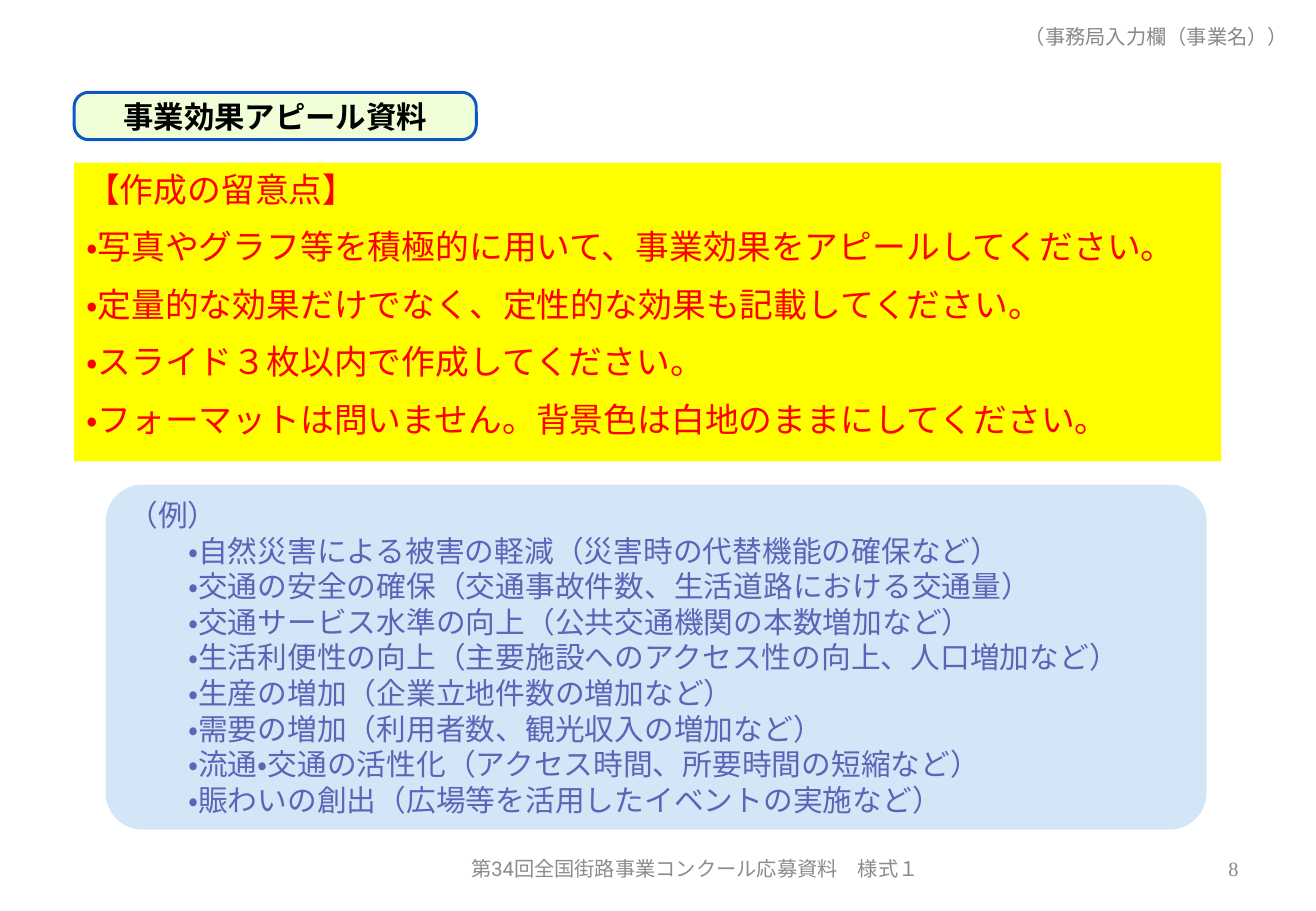
from pptx import Presentation
from pptx.dml.color import RGBColor
from pptx.enum.lang import MSO_LANGUAGE_ID
from pptx.enum.shapes import MSO_SHAPE
from pptx.enum.text import MSO_ANCHOR, PP_ALIGN
from pptx.util import Inches, Pt

JAPANESE = MSO_LANGUAGE_ID.JAPANESE
RECT, ROUNDED = MSO_SHAPE.RECTANGLE, MSO_SHAPE.ROUNDED_RECTANGLE
TOP, MIDDLE = MSO_ANCHOR.TOP, MSO_ANCHOR.MIDDLE
LEFT, CENTER, RIGHT = PP_ALIGN.LEFT, PP_ALIGN.CENTER, PP_ALIGN.RIGHT

COLORS = {
    "example_fill": "D4E5F7", "example_text": "5C64B7",
    "title_fill": "F0FFD7", "title_line": "0E58C4", "title_text": "000000",
    "notice_fill": "FFFF00", "notice_text": "FF0000",
    "margin_text": "898989", "footer_text": "8C8C8C",
}
EXAMPLES = [
    "自然災害による被害の軽減（災害時の代替機能の確保など）",
    "交通の安全の確保（交通事故件数、生活道路における交通量）",
    "交通サービス水準の向上（公共交通機関の本数増加など）",
    "生活利便性の向上（主要施設へのアクセス性の向上、人口増加など）",
    "生産の増加（企業立地件数の増加など）",
    "需要の増加（利用者数、観光収入の増加など）",
    "流通・交通の活性化（アクセス時間、所要時間の短縮など）",
    "賑わいの創出（広場等を活用したイベントの実施など）",
]
NOTICES = [
    "写真やグラフ等を積極的に用いて、事業効果をアピールしてください。",
    "定量的な効果だけでなく、定性的な効果も記載してください。",
    "スライド３枚以内で作成してください。",
    "フォーマットは問いません。背景色は白地のままにしてください。",
]


class AppealSlide:
    """Draws styled panels and labels on one slide."""

    def __init__(self, slide):
        self.slide = slide

    def color(self, name):
        return RGBColor.from_string(COLORS[name])

    def fill_text(self, frame, lines, font, size, color, align=LEFT, anchor=MIDDLE,
                  bold=False, gap=0, indent=0):
        frame.word_wrap = True
        frame.vertical_anchor = anchor
        frame.text = "\n".join(lines)
        for index, paragraph in enumerate(frame.paragraphs):
            paragraph.alignment = align
            paragraph.space_before = Pt(gap)
            if index and indent:
                paragraph._p.get_or_add_pPr().set("marL", str(Inches(indent)))
            for run in paragraph.runs:
                run.font.name = font
                run.font.size = Pt(size)
                run.font.bold = bold
                run.font.color.rgb = self.color(color)
                run.font.language_id = JAPANESE

    def panel(self, kind, box, fill, lines, line=None, corner=None, **style):
        panel = self.slide.shapes.add_shape(kind, *map(Inches, box))
        panel.shadow.inherit = False
        panel.fill.solid()
        panel.fill.fore_color.rgb = self.color(fill)
        if line:
            panel.line.color.rgb = self.color(line)
            panel.line.width = Pt(1.75)
        else:
            panel.line.fill.background()
        if corner:
            panel.adjustments[0] = corner
        self.fill_text(panel.text_frame, lines, **style)

    def label(self, box, text, **style):
        label = self.slide.shapes.add_textbox(*map(Inches, box))
        self.fill_text(label.text_frame, [text], size=12, **style)


def main():
    deck = Presentation()
    deck.slide_width, deck.slide_height = Inches(10.83), Inches(7.5)
    page = AppealSlide(deck.slides.add_slide(deck.slide_layouts[6]))

    page.panel(ROUNDED, (0.87, 3.99, 9.06, 2.84), "example_fill",
               ["（例）"] + ["・" + example for example in EXAMPLES], corner=0.107,
               font="Arial", size=17.6, color="example_text", indent=0.49)
    page.panel(ROUNDED, (0.61, 0.76, 3.31, 0.39), "title_fill",
               ["事業効果アピール資料"], line="title_line", corner=0.308,
               font="Arial", size=18, color="title_text", align=CENTER, bold=True)
    page.panel(RECT, (0.61, 1.34, 9.44, 2.46), "notice_fill",
               ["【作成の留意点】"] + ["・" + notice for notice in NOTICES],
               font="Times New Roman", size=20, color="notice_text", anchor=TOP, gap=10)

    margin = {"font": "Times New Roman", "color": "margin_text", "align": RIGHT}
    page.label((7.76, 6.95, 2.53, 0.4), "8", **margin)
    page.label((8.17, 0.1, 2.53, 0.4), "（事務局入力欄（事業名））", **margin)
    page.label((3.68, 6.95, 4.08, 0.4), "第34回全国街路事業コンクール応募資料　様式１",
               font="Roboto", color="footer_text", align=CENTER)
    deck.save("out.pptx")


if __name__ == "__main__":
    main()
